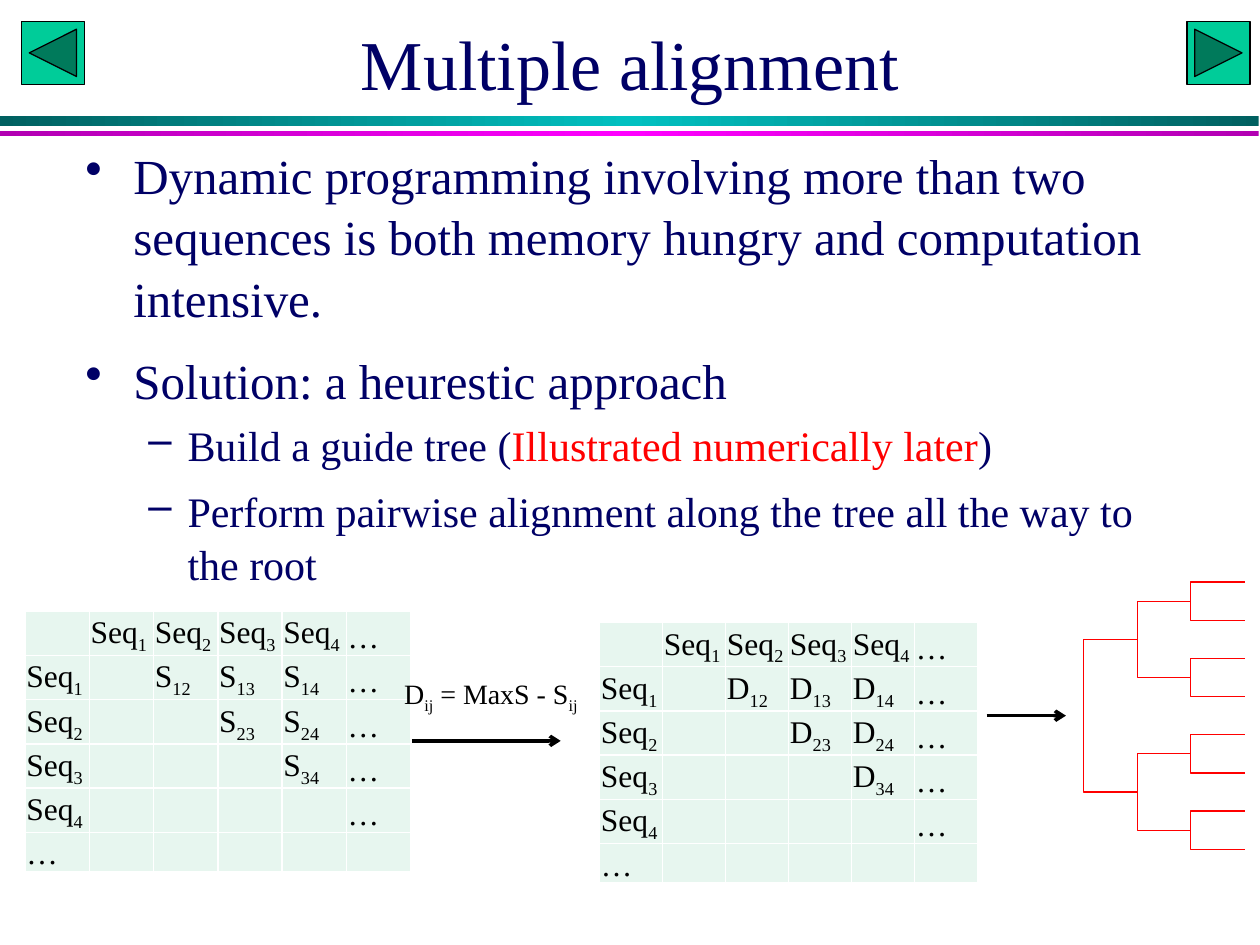
"""Build the multiple alignment slide with two score tables and a guide tree."""
from copy import deepcopy

from lxml.etree import SubElement
from pptx import Presentation
from pptx.dml.color import RGBColor
from pptx.enum.shapes import MSO_CONNECTOR, MSO_SHAPE
from pptx.enum.text import MSO_ANCHOR, PP_ALIGN
from pptx.oxml.ns import qn
from pptx.util import Inches, Pt

COLORS = {
    "navy": "000066", "red": "FF0000", "black": "000000", "button": "00CC99",
    "cell": "E7F6EF", "teal_dark": "006060", "teal": "00C0C0",
    "magenta_dark": "B200B2", "magenta": "FF00FF",
}


def color(name):
    """Return the named colour."""
    return RGBColor.from_string(COLORS[name])


def add_run(paragraph, text, size, color_name, baseline=0):
    """Append a formatted run to the paragraph."""
    run = paragraph.add_run()
    run.text = text
    for key, value in {"size": Pt(size), "name": "Times New Roman"}.items():
        setattr(run.font, key, value)
    run.font.color.rgb = color(color_name)
    if baseline:
        run._r.get_or_add_rPr().set("baseline", str(baseline))


presentation = Presentation()
presentation.slide_width, presentation.slide_height = Inches(10), Inches(7.5)
slide = presentation.slides.add_slide(presentation.slide_layouts[5])
shapes = slide.shapes

for top, height, edge, middle in [
    (0.92, 0.08, "teal_dark", "teal"),
    (1.04, 0.04, "magenta_dark", "magenta"),
]:
    band = shapes.add_shape(
        MSO_SHAPE.RECTANGLE, 0, Inches(top), Inches(9.99), Inches(height))
    band.shadow.inherit = False
    band.line.fill.background()
    band.fill.gradient()
    band.fill.gradient_angle = 0
    first_stop = band.fill._fill._gradFill.find(qn("a:gsLst"))[0]
    first_stop.addnext(deepcopy(first_stop))
    for stop, position, name in zip(
            band.fill.gradient_stops, (0, 0.5, 1), (edge, middle, edge)):
        stop.position = position
        stop.color.rgb = color(name)

for left, kind in [
    (0.17, MSO_SHAPE.ACTION_BUTTON_BACK_OR_PREVIOUS),
    (9.42, MSO_SHAPE.ACTION_BUTTON_FORWARD_OR_NEXT),
]:
    button = shapes.add_shape(
        kind, Inches(left), Inches(0.17), Inches(0.5), Inches(0.5))
    button.shadow.inherit = False
    button.fill.solid()
    button.fill.fore_color.rgb = color("button")
    button.line.color.rgb = color("black")
    button.line.width = Pt(0.75)

title = shapes.title
for key, value in {"left": 0.75, "top": 0, "width": 8.5, "height": 1}.items():
    setattr(title, key, Inches(value))
title.text_frame.vertical_anchor = MSO_ANCHOR.MIDDLE
title_paragraph = title.text_frame.paragraphs[0]
title_paragraph.alignment = PP_ALIGN.CENTER
add_run(title_paragraph, "Multiple alignment", 40, "navy")

body = shapes.add_textbox(
    Inches(0.58), Inches(1.08), Inches(8.98), Inches(5.58)).text_frame
body.word_wrap = True
levels = [
    {"size": 28, "margin": 0.38, "indent": -0.38, "bullet": "•",
     "space_before": 11.2, "space_after": 0},
    {"size": 24, "margin": 0.81, "indent": -0.31, "bullet": "–",
     "space_before": 4.8, "space_after": 2.4},
]
for index, (level, text) in enumerate([
    (0, "Dynamic programming involving more than two sequences is both "
        "memory hungry and computation intensive."),
    (0, "Solution: a heurestic approach"),
    (1, "Build a guide tree (|Illustrated numerically later|)"),
    (1, "Perform pairwise alignment along the tree all the way to the root"),
]):
    paragraph = body.add_paragraph() if index else body.paragraphs[0]
    style = levels[level]
    paragraph.level = level
    paragraph.line_spacing = 1.05
    for key in ("space_before", "space_after"):
        setattr(paragraph, key, Pt(style[key]))
    properties = paragraph._p.get_or_add_pPr()
    properties.set("marL", str(Inches(style["margin"])))
    properties.set("indent", str(Inches(style["indent"])))
    SubElement(properties, qn("a:buChar")).set("char", style["bullet"])
    for part, words in enumerate(text.split("|")):
        add_run(paragraph, words, style["size"], "red" if part % 2 else "navy")

headers = ["Seq|1", "Seq|2", "Seq|3", "Seq|4", "…"]
for letter, left, top, column_width in [
    ("S", 0.2, 4.85, 0.51), ("D", 4.76, 4.94, 0.5),
]:
    table = shapes.add_table(
        6, 6, Inches(left), Inches(top),
        Inches(6 * column_width), Inches(1.96)).table
    table.first_row = table.horz_banding = False
    for column in table.columns:
        column.width = Inches(column_width)
    for row_index, row in enumerate(table.rows):
        row.height = Inches(0.33 if row_index < 5 else 0.31)
        for column_index, cell in enumerate(row.cells):
            for key, value in {
                "margin_left": Inches(0.01), "margin_right": Inches(0.01),
                "margin_top": Inches(0.01), "margin_bottom": 0,
                "vertical_anchor": MSO_ANCHOR.BOTTOM,
            }.items():
                setattr(cell, key, value)
            cell.fill.solid()
            cell.fill.fore_color.rgb = color("cell")
            if row_index == column_index:
                continue
            if 0 in (row_index, column_index):
                text = headers[max(row_index, column_index) - 1]
            elif row_index > column_index:
                continue
            elif column_index == 5:
                text = "…"
            else:
                text = f"{letter}|{row_index}{column_index}"
            for part, words in enumerate(text.split("|")):
                add_run(cell.text_frame.paragraphs[0], words, 18, "black",
                        -25000 * part)

label = shapes.add_textbox(
    Inches(3.11), Inches(5.32), Inches(1.73), Inches(0.37)).text_frame
for part, words in enumerate("D|ij| = MaxS - S|ij".split("|")):
    add_run(label.paragraphs[0], words, 16, "black", -25000 * (part % 2))

for start, end, y in [(3.27, 4.45, 5.88), (7.83, 8.46, 5.68)]:
    arrow = shapes.add_connector(
        MSO_CONNECTOR.STRAIGHT, Inches(start), Inches(y), Inches(end), Inches(y))
    arrow.line.color.rgb = color("black")
    arrow.line.width = Pt(2)
    SubElement(arrow.line._get_or_add_ln(), qn("a:tailEnd")).set("type", "arrow")
    SubElement(arrow._element.spPr, qn("a:effectLst"))

node_heights = [4.62 + 2.12 * leaf / 7 for leaf in range(8)]
for left, right in [(9.45, 9.88), (9.03, 9.45), (8.6, 9.03)]:
    parents = [(upper + lower) / 2
               for upper, lower in zip(node_heights[::2], node_heights[1::2])]
    for index, child in enumerate(node_heights):
        builder = shapes.build_freeform(
            Inches(left), Inches(parents[index // 2]))
        builder.add_line_segments(
            [(Inches(left), Inches(child)), (Inches(right), Inches(child))],
            close=False)
        branch = builder.convert_to_shape()
        branch.shadow.inherit = False
        branch.fill.background()
        branch.line.color.rgb = color("red")
        branch.line.width = Pt(0)
    node_heights = parents

presentation.save("out.pptx")
